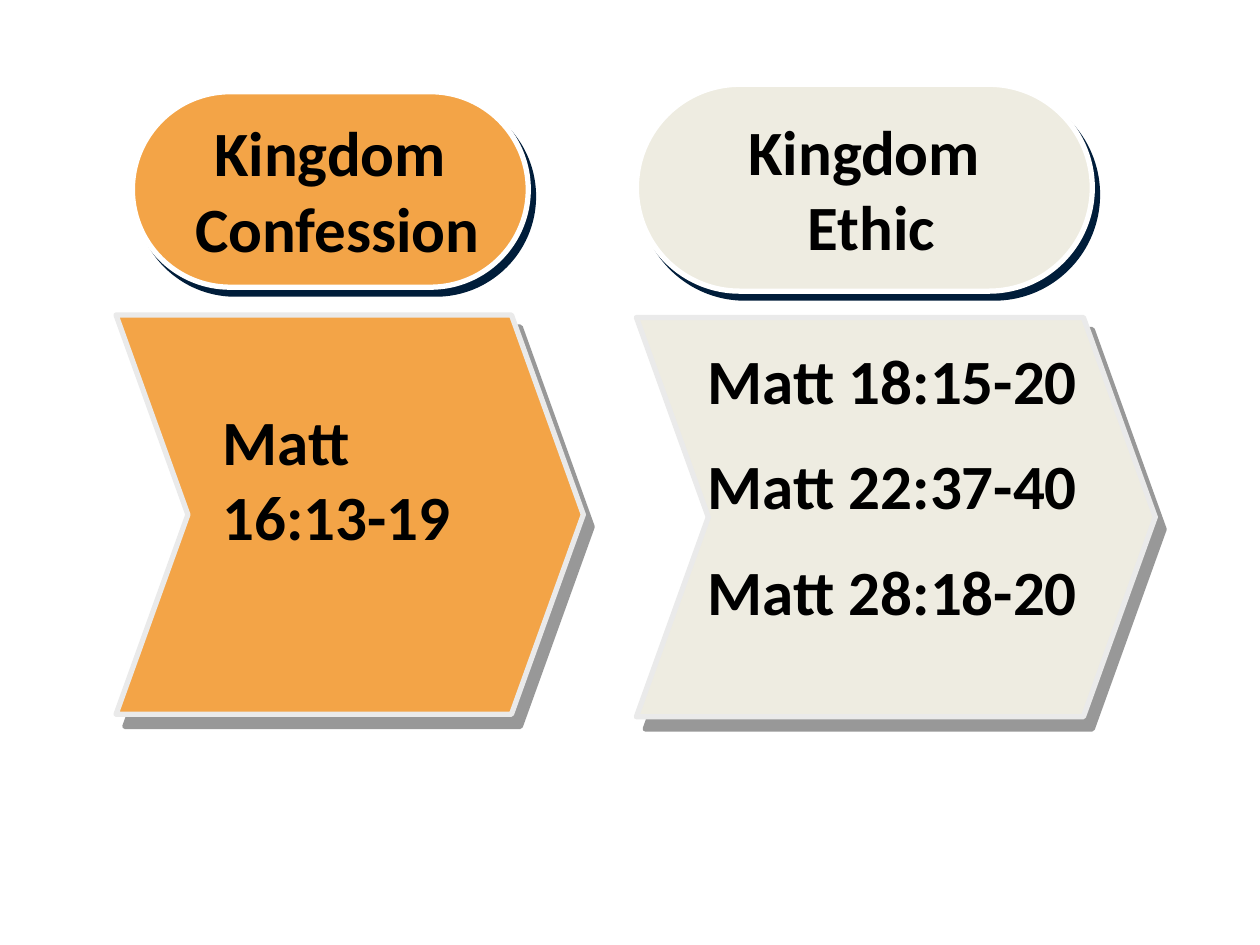
from dataclasses import dataclass

from lxml import etree
from pptx import Presentation
from pptx.dml.color import RGBColor
from pptx.enum.shapes import MSO_SHAPE
from pptx.enum.text import MSO_ANCHOR, MSO_AUTO_SIZE, PP_ALIGN
from pptx.oxml.ns import qn
from pptx.util import Cm, Pt

CHEVRON = MSO_SHAPE.CHEVRON
PILL = MSO_SHAPE.ROUNDED_RECTANGLE
MIDDLE = MSO_ANCHOR.MIDDLE
GROW = MSO_AUTO_SIZE.SHAPE_TO_FIT_TEXT
CENTER = PP_ALIGN.CENTER
BLANK_LAYOUT = 6


@dataclass(frozen=True)
class Shadow:
    color: str
    opacity: int
    distance: float
    angle: int


@dataclass(frozen=True)
class Theme:
    font: str = "Calibri"
    size: int = 36
    ink: str = "000000"
    orange: str = "F3A447"
    cream: str = "EEECE1"
    chevron_line: str = "EAEAEA"
    pill_line: str = "FFFFFF"
    line_width: int = 3
    paragraph_gap: int = 17
    chevron_shadow: Shadow = Shadow("333333", 50, 8.6, 54)
    pill_shadow: Shadow = Shadow("001D3A", 100, 5, 53)


THEME = Theme()


def add_shadow(shape, shadow):
    shape.shadow.inherit = False
    effects = shape._element.spPr.find(qn("a:effectLst"))
    outer = etree.SubElement(
        effects, qn("a:outerShdw"), dist=str(Pt(shadow.distance)),
        dir=str(shadow.angle * 60000), algn="ctr", rotWithShape="0")
    color = etree.SubElement(outer, qn("a:srgbClr"), val=shadow.color)
    etree.SubElement(color, qn("a:alpha"), val=str(shadow.opacity * 1000))


def add_panel(slide, kind, place, adjustment, fill, line, shadow):
    panel = slide.shapes.add_shape(kind, *map(Cm, place))
    panel.adjustments[0] = adjustment
    panel.fill.solid()
    panel.fill.fore_color.rgb = RGBColor.from_string(fill)
    panel.line.color.rgb = RGBColor.from_string(line)
    panel.line.width = Pt(THEME.line_width)
    add_shadow(panel, shadow)
    return panel


def write_text(frame, lines):
    frame.text = "\n".join(lines)
    for para in frame.paragraphs:
        for span in para.runs:
            span.font.name = THEME.font
            span.font.size = Pt(THEME.size)
            span.font.bold = True
            span.font.color.rgb = RGBColor.from_string(THEME.ink)


def add_chevron(slide, place, fill):
    add_panel(slide, CHEVRON, place, 0.18, fill,
              THEME.chevron_line, THEME.chevron_shadow)


def add_heading(slide, place, fill, lines):
    pill = add_panel(slide, PILL, place, 0.5, fill,
                     THEME.pill_line, THEME.pill_shadow)
    frame = pill.text_frame
    frame.word_wrap = False
    frame.vertical_anchor = MIDDLE
    write_text(frame, lines)
    for para in frame.paragraphs:
        para.alignment = CENTER


def add_verses(slide, place, verses):
    box = slide.shapes.add_textbox(*map(Cm, place))
    frame = box.text_frame
    frame.word_wrap = True
    frame.auto_size = GROW
    write_text(frame, verses)
    for para in frame.paragraphs:
        para.space_before = Pt(THEME.paragraph_gap)


def main():
    deck = Presentation()
    deck.slide_width, deck.slide_height = Cm(25.4), Cm(19.05)
    slide = deck.slides.add_slide(deck.slide_layouts[BLANK_LAYOUT])

    add_chevron(slide, (12.83, 6.4, 10.46, 8.05), THEME.cream)
    add_chevron(slide, (2.34, 6.35, 9.42, 8.05), THEME.orange)
    add_heading(slide, (2.67, 1.85, 7.98, 3.94), THEME.orange,
                ["Kingdom", " Confession"])
    add_heading(slide, (12.83, 1.7, 9.19, 4.17), THEME.cream,
                ["Kingdom", " Ethic"])
    add_verses(slide, (4.24, 7.98, 5.66, 3.33), ["Matt 16:13-19"])
    add_verses(slide, (14.02, 6.76, 7.98, 6.4),
               ["Matt 18:15-20", "Matt 22:37-40", "Matt 28:18-20"])

    deck.save("out.pptx")


if __name__ == "__main__":
    main()
